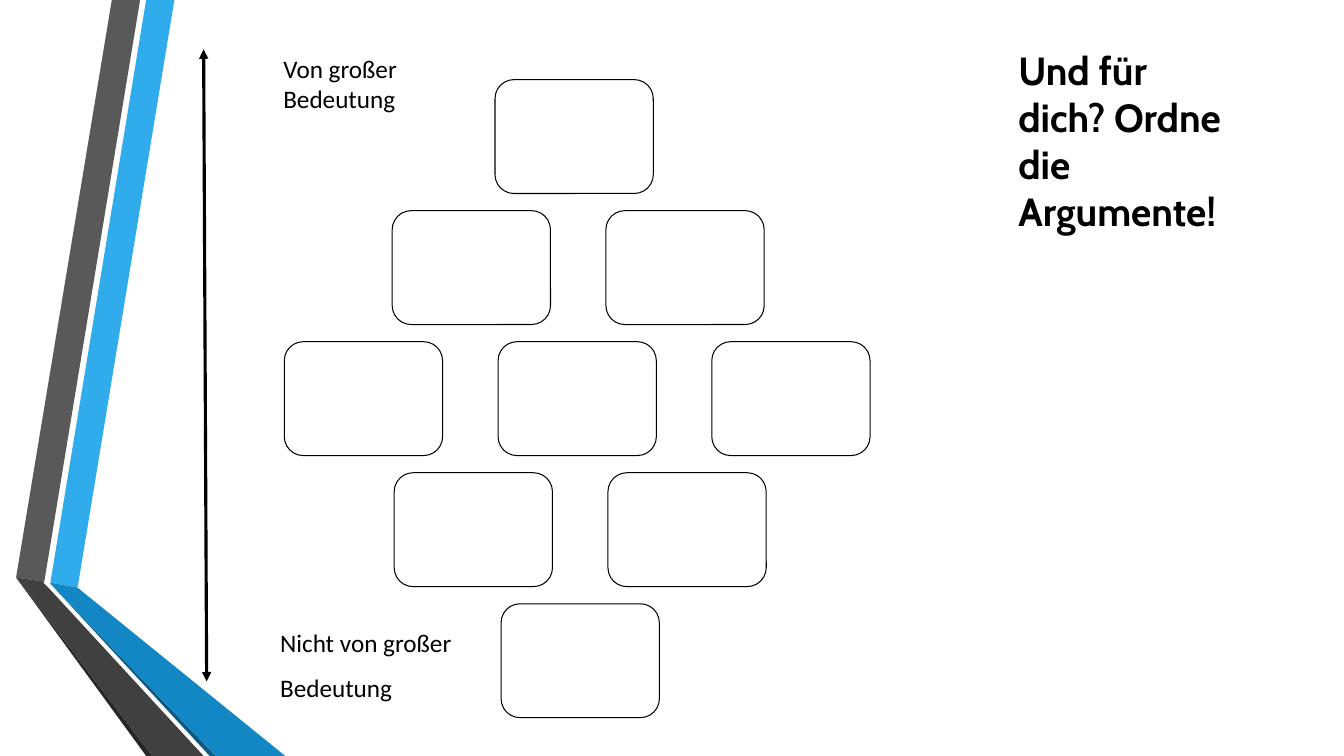
from lxml import etree
from pptx import Presentation
from pptx.dml.color import RGBColor
from pptx.enum.shapes import MSO_CONNECTOR, MSO_SHAPE
from pptx.enum.text import MSO_ANCHOR, MSO_AUTO_SIZE, PP_ALIGN
from pptx.oxml.ns import qn
from pptx.util import Inches, Pt

BLACK = RGBColor(0x00, 0x00, 0x00)
BLUE = RGBColor(0x30, 0xAC, 0xEC)
MID_BLUE = RGBColor(0x12, 0x87, 0xC3)
DARK_BLUE = RGBColor(0x0C, 0x5A, 0x82)
GRAY = RGBColor(0x59, 0x59, 0x59)
DARK_GRAY = RGBColor(0x40, 0x40, 0x40)
SHADOW_GRAY = RGBColor(0x26, 0x26, 0x26)

RIBBONS = [
    (BLUE, [(0.5, 5.78), (0.77, 5.83), (1.73, 0), (1.45, 0)]),
    (GRAY, [(1.39, 0), (1.11, 0), (0.16, 5.73), (0.44, 5.77)]),
    (SHADOW_GRAY, [(0.16, 5.73), (1.45, 7.5), (1.51, 7.5)]),
    (DARK_BLUE, [(0.5, 5.79), (2.08, 7.5), (2.14, 7.5)]),
    (MID_BLUE, [(0.5, 5.79), (2.14, 7.5), (2.83, 7.5), (0.77, 5.83), (0.5, 5.78)]),
    (DARK_GRAY, [(2.02, 7.5), (0.48, 5.83), (0.43, 5.78), (0.44, 5.77),
                 (0.16, 5.73), (1.51, 7.5)]),
]

# Left edge and number of cards in each row of the diamond
CARD_ROWS = [(4.91, 1), (3.89, 2), (2.82, 3), (3.91, 2), (4.97, 1)]
CARD_TOP = 0.79
CARD_WIDTH, CARD_HEIGHT = 1.57, 1.13
COLUMN_PITCH, ROW_PITCH = 2.12, 1.3


def add_ribbon(s, color, points):
    corners = [(Inches(x), Inches(y)) for x, y in points]
    builder = s.shapes.build_freeform(*corners[0])
    builder.add_line_segments(corners[1:], close=True)
    ribbon = builder.convert_to_shape()
    ribbon.shadow.inherit = False
    ribbon.fill.solid()
    ribbon.fill.fore_color.rgb = color
    ribbon.line.fill.background()


def add_card(s, left, top):
    card = s.shapes.add_shape(MSO_SHAPE.ROUNDED_RECTANGLE, Inches(left), Inches(top),
                              Inches(CARD_WIDTH), Inches(CARD_HEIGHT))
    card.shadow.inherit = False
    card.fill.background()
    card.line.color.rgb = BLACK
    card.line.width = Pt(0.75)


def add_diamond(s):
    for row, (left, count) in enumerate(CARD_ROWS):
        for column in range(count):
            add_card(s, left + column * COLUMN_PITCH, CARD_TOP + row * ROW_PITCH)


def add_label(s, left, top, width, height, lines, inset, line_spacing=1, space_after=0):
    box = s.shapes.add_textbox(Inches(left), Inches(top), Inches(width), Inches(height))
    tf = box.text_frame
    tf.word_wrap = True
    tf.margin_left = tf.margin_right = Inches(inset)
    tf.margin_top = tf.margin_bottom = Inches(0.04)
    tf.text = "\n".join(lines)
    for p in tf.paragraphs:
        p.line_spacing = line_spacing
        p.space_after = Pt(space_after)
        p.font.name = "Calibri"
        p.font.size = Pt(18)
        p.font.color.rgb = BLACK


def add_scale_arrow(s):
    arrow = s.shapes.add_connector(MSO_CONNECTOR.STRAIGHT, Inches(2.02), Inches(0.49),
                                   Inches(2.05), Inches(6.76))
    arrow.line.color.rgb = BLACK
    arrow.line.width = Pt(2.25)
    for end in ("a:headEnd", "a:tailEnd"):
        etree.SubElement(arrow.line._get_or_add_ln(), qn(end), type="triangle")
    etree.SubElement(arrow._element.spPr, qn("a:effectLst"))


def set_title(s, text):
    title = s.shapes.title
    title.left, title.top = Inches(10), Inches(0.41)
    title.width, title.height = Inches(2.27), Inches(1.99)
    tf = title.text_frame
    tf.text = text
    tf.word_wrap = True
    tf.auto_size = MSO_AUTO_SIZE.NONE
    tf.vertical_anchor = MSO_ANCHOR.TOP
    p = tf.paragraphs[0]
    p.alignment = PP_ALIGN.LEFT
    p.font.name = "Cabin"
    p.font.size = Pt(28)
    p.font.bold = True
    p.font.color.rgb = BLACK


def main():
    prs = Presentation()
    prs.slide_width, prs.slide_height = Inches(13.33), Inches(7.5)
    s = prs.slides.add_slide(prs.slide_layouts[5])
    for color, points in RIBBONS:
        add_ribbon(s, color, points)
    add_diamond(s)
    add_label(s, 2.77, 0.49, 1.43, 0.96, ["Von großer", "Bedeutung"], inset=0.04)
    add_label(s, 2.68, 6.13, 6.67, 1.19, ["Nicht von großer", "Bedeutung"], inset=0.1,
              line_spacing=1.19, space_after=6)
    add_scale_arrow(s)
    set_title(s, "Und für dich? Ordne die Argumente!")
    prs.save("out.pptx")


if __name__ == "__main__":
    main()
